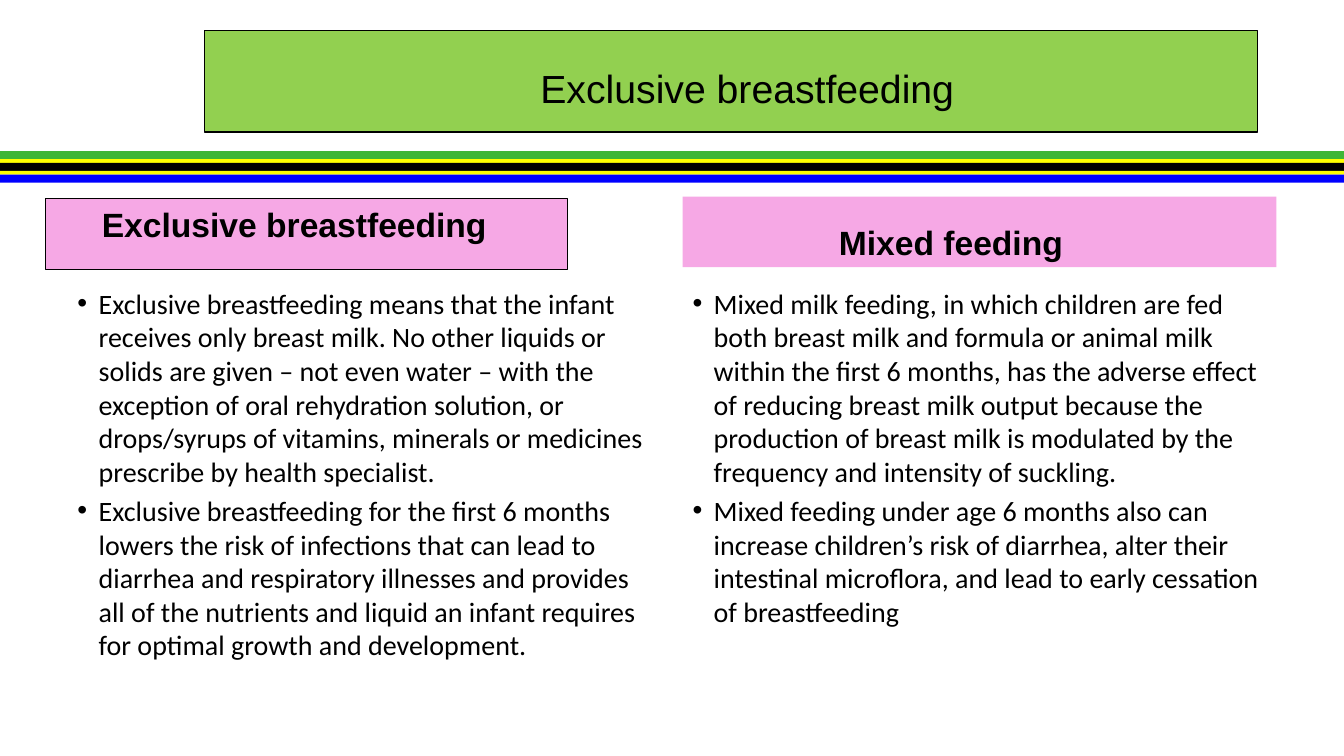
from lxml import etree
from pptx import Presentation
from pptx.dml.color import RGBColor
from pptx.enum.shapes import MSO_SHAPE
from pptx.enum.text import MSO_ANCHOR, PP_ALIGN
from pptx.oxml.ns import qn
from pptx.util import Inches, Pt

RECT = MSO_SHAPE.RECTANGLE
TOP, BOTTOM = MSO_ANCHOR.TOP, MSO_ANCHOR.BOTTOM
LEFT = PP_ALIGN.LEFT
W, H = Inches(13.33), Inches(7.5)
COLORS = {"green": "3FB636", "yellow": "FFFF00", "black": "000000",
          "blue": "0000FF", "lime": "92D050", "pink": "F6A8E5"}
BANDS = [("green", 2), ("yellow", 1), ("black", 2), ("yellow", 1), ("blue", 2)]
BAND_TOP, BAND_UNIT = 20, 0.52
LEFT_COL, RIGHT_COL, COL_WIDTH = 5.03, 50.79, 44.19
BODY_TOP, HEAD_HEIGHT = 37.2, 9.33

EXCLUSIVE = [
    "Exclusive breastfeeding means that the infant receives only breast milk. "
    "No other liquids or solids are given – not even water – with the exception "
    "of oral rehydration solution, or drops/syrups of vitamins, minerals or "
    "medicines prescribe by health specialist.",
    "Exclusive breastfeeding for the first 6 months lowers the risk of infections "
    "that can lead to diarrhea and respiratory illnesses and provides all of the "
    "nutrients and liquid an infant requires for optimal growth and development.",
]
MIXED = [
    "Mixed milk feeding, in which children are fed both breast milk and formula or "
    "animal milk within the first 6 months, has the adverse effect of reducing "
    "breast milk output because the production of breast milk is modulated by the "
    "frequency and intensity of suckling.",
    "Mixed feeding under age 6 months also can increase children’s risk of "
    "diarrhea, alter their intestinal microflora, and lead to early cessation "
    "of breastfeeding",
]


def color(name):
    """Return the named colour."""
    return RGBColor.from_string(COLORS[name])


def place(x, y, w, h):
    """Turn percentages of the slide into lengths."""
    return [int(share * side / 100) for share, side in zip((x, y, w, h), (W, H, W, H))]


def add_box(s, at, fill, line=None):
    """Add a filled rectangle, outlined if a line colour is given."""
    sp = s.shapes.add_shape(RECT, *place(*at))
    sp.shadow.inherit = False
    sp.fill.solid()
    sp.fill.fore_color.rgb = color(fill)
    if line:
        sp.line.color.rgb = color(line)
        sp.line.width = Pt(0.75)
    else:
        sp.line.fill.background()
    return sp


def add_bullet(p):
    """Give a paragraph a hanging round bullet."""
    pPr = p._p.get_or_add_pPr()
    pPr.set("marL", str(Inches(0.21)))
    pPr.set("indent", str(-Inches(0.21)))
    etree.SubElement(pPr, qn("a:buFont")).set("typeface", "Arial")
    etree.SubElement(pPr, qn("a:buChar")).set("char", "•")


def write(sp, texts, font="Arial", size=24, bold=False, bullet=False,
          anchor=TOP, inset=0.1, top=0.05):
    """Write paragraphs into a shape."""
    tf = sp.text_frame
    tf.word_wrap = True
    tf.vertical_anchor = anchor
    tf.margin_left, tf.margin_top = Inches(inset), Inches(top)
    for i, text in enumerate(texts):
        p = tf.paragraphs[0] if i == 0 else tf.add_paragraph()
        p.alignment = LEFT
        if bullet:
            add_bullet(p)
        p.space_before = Pt(4 if i else 0)
        r = p.add_run()
        r.text = text
        r.font.name, r.font.size, r.font.bold = font, Pt(size), bold
        r.font.color.rgb = color("black")


def add_bands(s):
    """Stack the coloured bands across the slide."""
    y = BAND_TOP
    for name, units in BANDS:
        add_box(s, (0, y, 100, units * BAND_UNIT), name)
        y += units * BAND_UNIT


def add_body(s, x, h, texts):
    """Add one column of bulleted text."""
    sp = s.shapes.add_textbox(*place(x, BODY_TOP, COL_WIDTH, h))
    write(sp, texts, font="Calibri", size=20, bullet=True)


def main():
    """Build the slide and save it."""
    prs = Presentation()
    prs.slide_width, prs.slide_height = W, H
    s = prs.slides.add_slide(prs.slide_layouts[6])
    add_bands(s)
    add_body(s, LEFT_COL, 61.2, EXCLUSIVE)
    sp = add_box(s, (RIGHT_COL, 26, COL_WIDTH, HEAD_HEIGHT), "pink")
    write(sp, ["Mixed feeding"], bold=True, anchor=BOTTOM, inset=1.55)
    add_body(s, RIGHT_COL, 58.8, MIXED)
    sp = add_box(s, (15.23, 4, 78.32, 13.47), "lime", "black")
    write(sp, ["Exclusive breastfeeding"], size=28, inset=3.33, top=0.34)
    sp = add_box(s, (3.38, 26.27, 38.86, HEAD_HEIGHT), "pink", "black")
    write(sp, ["Exclusive breastfeeding"], bold=True, inset=0.56)
    prs.save("out.pptx")


if __name__ == "__main__":
    main()
